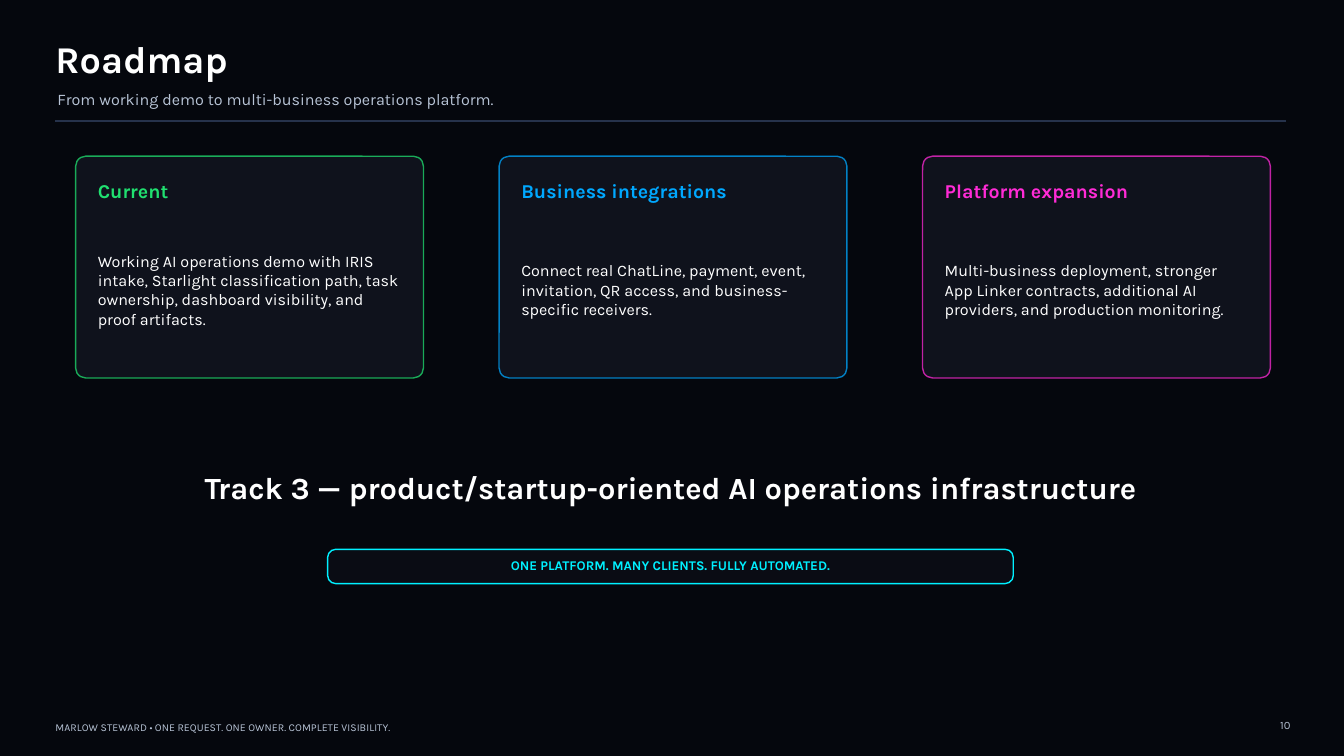
from dataclasses import dataclass
from typing import NamedTuple

from lxml.etree import SubElement
from pptx import Presentation
from pptx.dml.color import RGBColor
from pptx.enum.shapes import MSO_CONNECTOR, MSO_SHAPE
from pptx.enum.text import MSO_ANCHOR, PP_ALIGN
from pptx.oxml.ns import qn
from pptx.util import Emu, Pt

EMU_PER_PX = 9144


@dataclass(frozen=True)
class Theme:
    """Colours, font and type sizes of the deck."""

    font: str = "Karla"
    background: str = "05070D"
    card: str = "10131D"
    banner: str = "0B0D15"
    rule: str = "26324B"
    white: str = "FFFFFF"
    muted: str = "B8C4D6"
    green: str = "20E070"
    blue: str = "00A8FF"
    pink: str = "FF2BD6"
    cyan: str = "00F0FF"
    title_size: float = 27
    statement_size: float = 22
    heading_size: float = 14
    body_size: float = 11.5
    banner_size: float = 9.5
    page_size: float = 8
    footer_size: float = 7.5


class Box(NamedTuple):
    """A rectangle in px."""

    left: int
    top: int
    width: int
    height: int

    def inner(self, left, top, width, height):
        """Return a box placed relative to this one."""
        return Box(self.left + left, self.top + top, width, height)

    def emu(self):
        """Return the four lengths in EMU."""
        return [px(length) for length in self]


THEME = Theme()
SLIDE = Box(0, 0, 1333, 750)
STAGES = [
    ("Current", THEME.green,
     "Working AI operations demo with IRIS intake, Starlight classification path, "
     "task ownership, dashboard visibility, and proof artifacts."),
    ("Business integrations", THEME.blue,
     "Connect real ChatLine, payment, event, invitation, QR access, and "
     "business-specific receivers."),
    ("Platform expansion", THEME.pink,
     "Multi-business deployment, stronger App Linker contracts, additional AI "
     "providers, and production monitoring."),
]


def px(length):
    """Turn px into EMU."""
    return Emu(length * EMU_PER_PX)


def set_opacity(properties, percent):
    """Give the solid fill inside an element an opacity in percent."""
    color = properties.find(qn("a:solidFill"))[0]
    SubElement(color, qn("a:alpha"), val=str(percent * 1000))


def add_text(slide, box, text, size=THEME.body_size, color=THEME.white,
             bold=False, align=PP_ALIGN.LEFT):
    """Add a text box without margins, centred vertically."""
    frame = slide.shapes.add_textbox(*box.emu()).text_frame
    frame.word_wrap = True
    frame.vertical_anchor = MSO_ANCHOR.MIDDLE
    frame.margin_left = frame.margin_right = frame.margin_top = frame.margin_bottom = 0
    paragraph = frame.paragraphs[0]
    paragraph.alignment = align
    run = paragraph.add_run()
    run.text = text
    run.font.name = THEME.font
    run.font.size = Pt(size)
    run.font.bold = bold
    run.font.color.rgb = RGBColor.from_string(color)


def add_panel(slide, box, fill, opacity, outline, outline_opacity=100, radius=10):
    """Add a rounded panel with a thin outline."""
    shape = slide.shapes.add_shape(MSO_SHAPE.ROUNDED_RECTANGLE, *box.emu())
    shape.adjustments[0] = radius / box.height
    shape.shadow.inherit = False
    shape.fill.solid()
    shape.fill.fore_color.rgb = RGBColor.from_string(fill)
    shape.line.color.rgb = RGBColor.from_string(outline)
    shape.line.width = Pt(1)
    properties = shape._element.spPr
    set_opacity(properties, opacity)
    set_opacity(properties.find(qn("a:ln")), outline_opacity)


def add_header(slide, box, title, subtitle):
    """Place the title, the subtitle and the rule along the bottom."""
    add_text(slide, box.inner(0, 0, 920, 46), title, size=THEME.title_size, bold=True)
    add_text(slide, box.inner(2, 51, 870, 24), subtitle, color=THEME.muted)
    bottom = px(box.top + box.height)
    rule = slide.shapes.add_connector(
        MSO_CONNECTOR.STRAIGHT, px(box.left), bottom, px(box.left + box.width), bottom)
    rule.line.color.rgb = RGBColor.from_string(THEME.rule)
    rule.line.width = Pt(1)
    SubElement(rule._element.spPr, qn("a:effectLst"))


def add_card(slide, box, heading, color, body):
    """Place one roadmap stage."""
    add_panel(slide, box, THEME.card, 97, color, outline_opacity=75)
    inner_width = box.width - 2 * 22
    add_text(slide, box.inner(22, 18, inner_width, 32), heading,
             size=THEME.heading_size, color=color, bold=True)
    add_text(slide, box.inner(22, 60, inner_width, 145), body)


def add_stages(slide, box, stages, gap=75):
    """Place the stages side by side at equal gaps."""
    width = (box.width - gap * (len(stages) - 1)) // len(stages)
    for index, stage in enumerate(stages):
        add_card(slide, box.inner(index * (width + gap), 0, width, box.height), *stage)


def add_closing(slide, box, statement, slogan):
    """Place the closing statement above the slogan banner."""
    add_text(slide, box.inner(0, 0, box.width, 42), statement,
             size=THEME.statement_size, bold=True, align=PP_ALIGN.CENTER)
    banner = box.inner((box.width - 680) // 2, box.height - 34, 680, 34)
    add_panel(slide, banner, THEME.banner, 92, THEME.cyan, radius=8)
    add_text(slide, banner.inner(10, 8, banner.width - 20, 15), slogan,
             size=THEME.banner_size, color=THEME.cyan, bold=True, align=PP_ALIGN.CENTER)


def add_footer(slide, box, text, page):
    """Place the footer line and the page number."""
    add_text(slide, box.inner(0, 4, 820, 20), text,
             size=THEME.footer_size, color=THEME.muted)
    add_text(slide, box.inner(box.width - 35, 0, 35, 22), page,
             size=THEME.page_size, color=THEME.muted, align=PP_ALIGN.RIGHT)


def add_roadmap_slide(presentation, box):
    """Build the roadmap slide."""
    slide = presentation.slides.add_slide(presentation.slide_layouts[6])
    slide.background.fill.solid()
    slide.background.fill.fore_color.rgb = RGBColor.from_string(THEME.background)
    add_header(slide, box.inner(55, 35, 1220, 85), "Roadmap",
               "From working demo to multi-business operations platform.")
    add_stages(slide, box.inner(75, 155, 1185, 220), STAGES)
    add_closing(slide, box.inner(110, 462, 1110, 117),
                "Track 3 — product/startup-oriented AI operations infrastructure",
                "ONE PLATFORM. MANY CLIENTS. FULLY AUTOMATED.")
    add_footer(slide, box.inner(55, 708, 1225, 24),
               "MARLOW STEWARD • ONE REQUEST. ONE OWNER. COMPLETE VISIBILITY.", "10")


def main():
    """Create and save the presentation."""
    presentation = Presentation()
    presentation.slide_width = px(SLIDE.width)
    presentation.slide_height = px(SLIDE.height)
    add_roadmap_slide(presentation, SLIDE)
    presentation.save("out.pptx")


if __name__ == "__main__":
    main()
